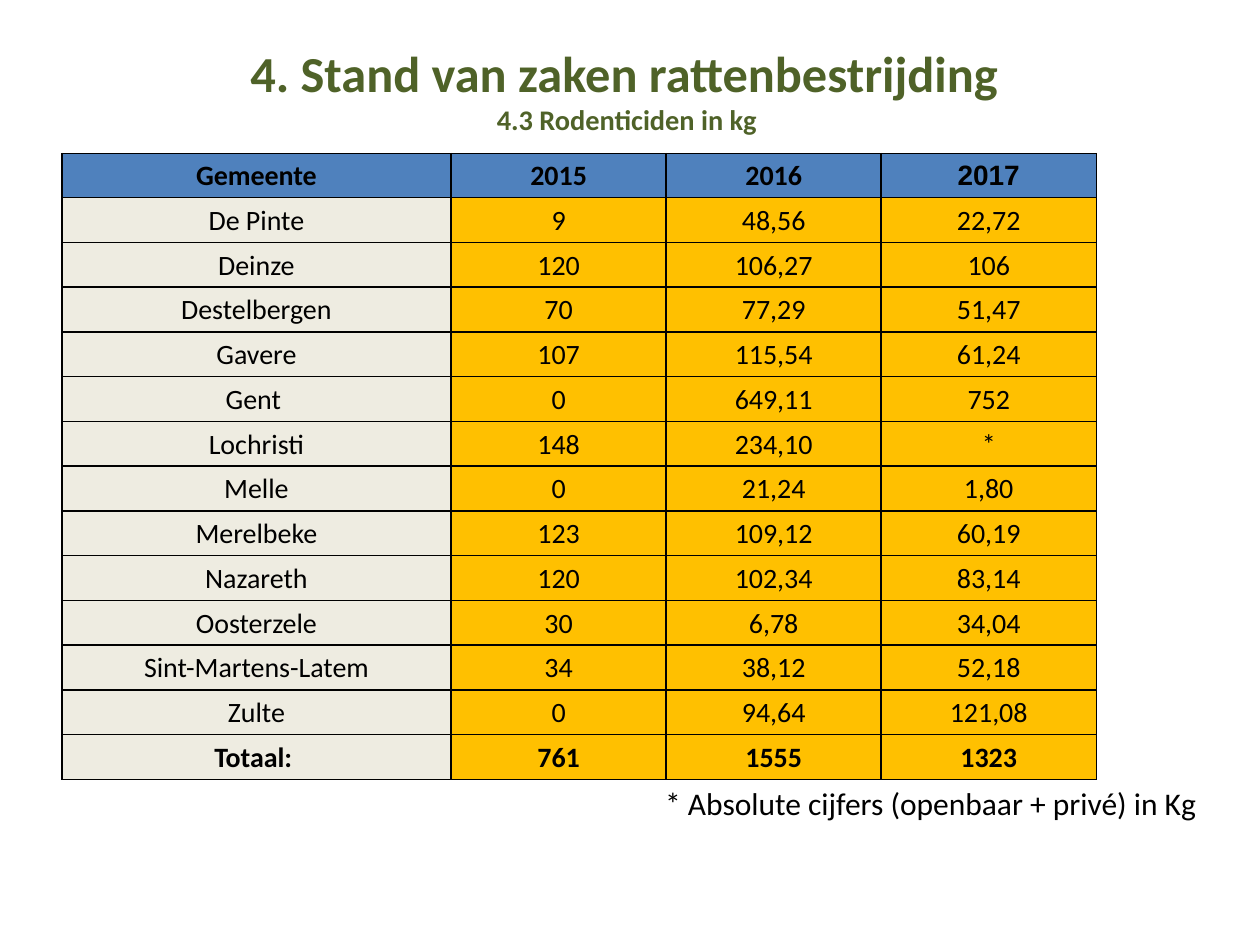
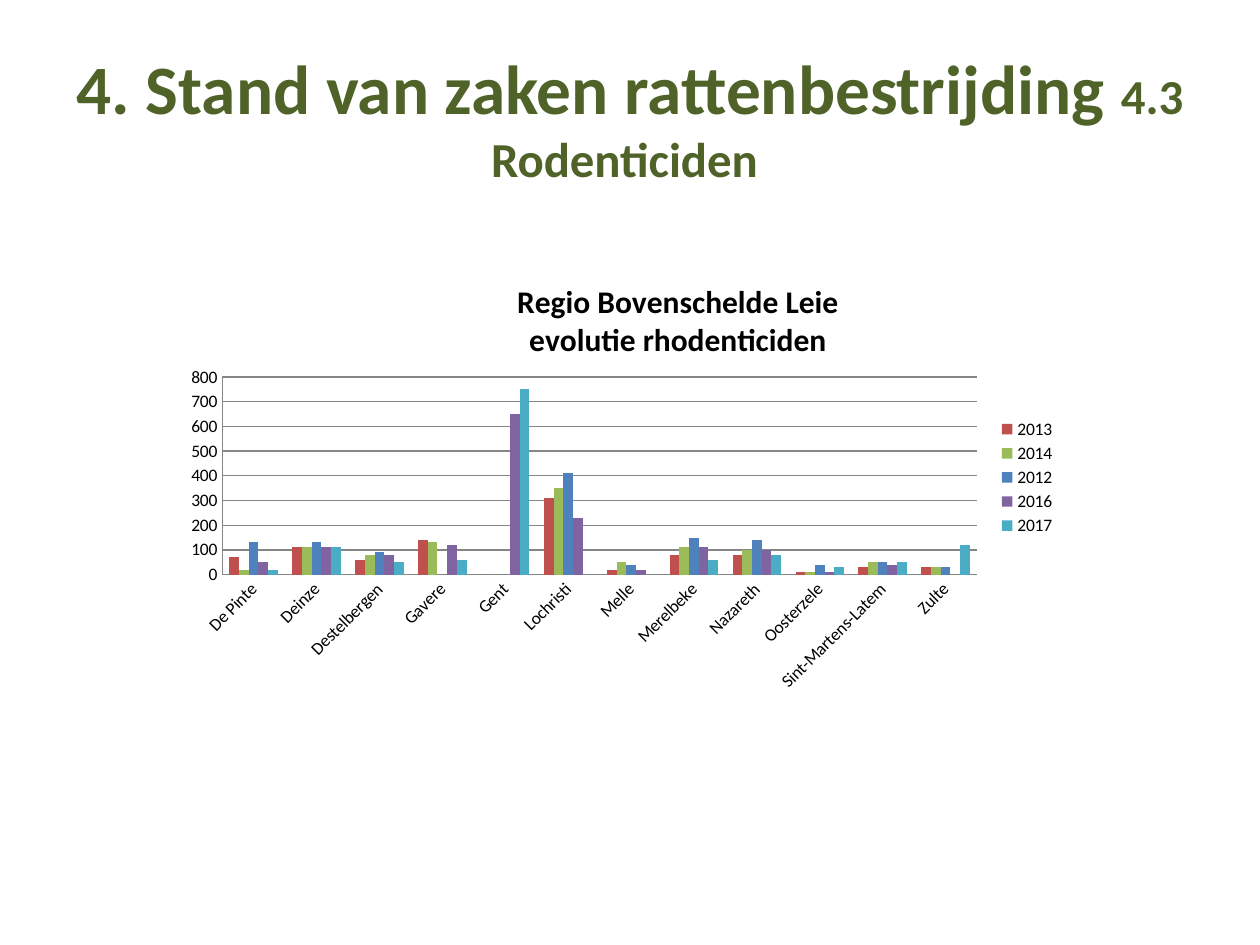
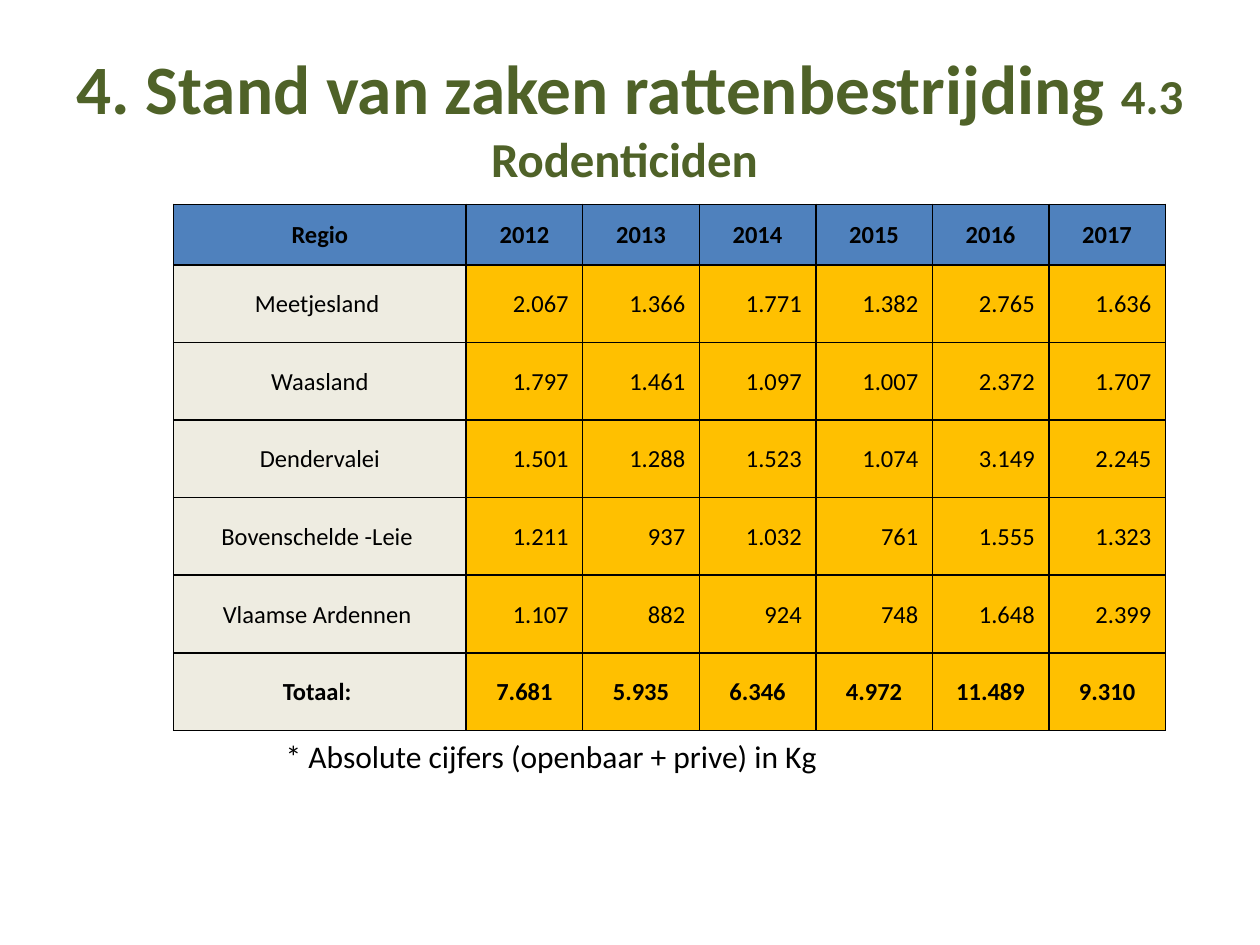
from lxml import etree
from pptx import Presentation
from pptx.chart.data import CategoryChartData
from pptx.dml.color import RGBColor
from pptx.enum.chart import XL_CHART_TYPE, XL_LEGEND_POSITION, XL_TICK_MARK
from pptx.enum.text import MSO_ANCHOR, PP_ALIGN
from pptx.oxml import parse_xml
from pptx.oxml.ns import nsdecls, qn
from pptx.util import Pt

LEFT, CENTER, RIGHT = PP_ALIGN.LEFT, PP_ALIGN.CENTER, PP_ALIGN.RIGHT
TOP, MIDDLE = MSO_ANCHOR.TOP, MSO_ANCHOR.MIDDLE
COLUMNS = XL_CHART_TYPE.COLUMN_CLUSTERED
LEGEND_RIGHT = XL_LEGEND_POSITION.RIGHT
NO_TICK = XL_TICK_MARK.NONE

FONT = "Calibri"
BLACK, GREEN, GRAY = "000000", "4F6228", "868686"
HEADER_FILL, LABEL_FILL, VALUE_FILL = "4F81BD", "EEECE1", "FFC000"
TITLE_BOX = (36, 21.6, 648, 90)
TITLE = "4. Stand van zaken rattenbestrijding "

TOWN_ROWS = [
    ("Gemeente", "2015", "2016", "2017"),
    ("De Pinte", "9", "48,56", "22,72"),
    ("Deinze", "120", "106,27", "106"),
    ("Destelbergen", "70", "77,29", "51,47"),
    ("Gavere", "107", "115,54", "61,24"),
    ("Gent ", "0", "649,11", "752"),
    ("Lochristi", "148", "234,10", "*"),
    ("Melle", "0", "21,24", "1,80"),
    ("Merelbeke", "123", "109,12", "60,19"),
    ("Nazareth", "120", "102,34", "83,14"),
    ("Oosterzele", "30", "6,78", "34,04"),
    ("Sint-Martens-Latem", "34", "38,12", "52,18"),
    ("Zulte", "0", "94,64", "121,08"),
    ("Totaal: ", "761", "1555", "1323"),
]
REGION_ROWS = [
    ("Regio", "2012", "2013", "2014", "2015", "2016", "2017"),
    ("Meetjesland ", "2.067", "1.366", "1.771", "1.382", "2.765", "1.636"),
    ("Waasland", "1.797", "1.461", "1.097", "1.007", "2.372", "1.707"),
    ("Dendervalei", "1.501", "1.288", "1.523", "1.074", "3.149", "2.245"),
    ("Bovenschelde -Leie ", "1.211", "937", "1.032", "761", "1.555", "1.323"),
    ("Vlaamse Ardennen ", "1.107", "882", "924", "748", "1.648", "2.399"),
    ("Totaal: ", "7.681", "5.935", "6.346", "4.972", "11.489", "9.310"),
]
TOWNS = [row[0].strip() for row in TOWN_ROWS[1:-1]]
SERIES = [
    ("2013", "C0504D", (70, 110, 60, 140, 0, 310, 20, 80, 80, 10, 30, 30)),
    ("2014", "9BBB59", (20, 110, 80, 130, 0, 350, 50, 110, 100, 10, 50, 30)),
    ("2012", "4F81BD", (130, 130, 90, 0, 0, 410, 40, 150, 140, 40, 50, 30)),
    ("2016", "8064A2", (50, 110, 80, 120, 650, 230, 20, 110, 100, 10, 40, None)),
    ("2017", "4BACC6", (20, 110, 50, 60, 750, 0, 0, 60, 80, 30, 50, 120)),
]


def rgb(value):
    """Return the colour for a hex string."""
    return RGBColor.from_string(value)


def set_font(font, size, color=BLACK, bold=False, name=FONT):
    """Apply size, colour, weight and typeface to a font."""
    for attribute, value in {"size": Pt(size), "bold": bold, "name": name}.items():
        setattr(font, attribute, value)
    font.color.rgb = rgb(color)


def add_text(slide, box, paragraphs, color=BLACK, bold=False, align=LEFT, anchor=TOP):
    """Add a text box whose paragraphs are lists of (text, size) runs."""
    frame = slide.shapes.add_textbox(*map(Pt, box)).text_frame
    frame.word_wrap = True
    frame.vertical_anchor = anchor
    for index, runs in enumerate(paragraphs):
        paragraph = frame.add_paragraph() if index else frame.paragraphs[0]
        paragraph.alignment = align
        for text, size in runs:
            run = paragraph.add_run()
            run.text = text
            set_font(run.font, size, color, bold)
    return frame


def add_title(slide, paragraphs, anchor=MIDDLE):
    """Add the green slide title."""
    return add_text(slide, TITLE_BOX, paragraphs, GREEN, True, CENTER, anchor)


def add_wide_title(slide):
    """Add the large title that runs on into the section name."""
    add_title(slide, [[(TITLE, 39.6), ("4.3 Rodenticiden ", 27.9)]])


def add_borders(cell):
    """Draw a thin black line on each side of a cell."""
    properties = cell._tc.get_or_add_tcPr()
    for side in ("lnL", "lnR", "lnT", "lnB"):
        line = etree.SubElement(properties, qn(f"a:{side}"), w=str(Pt(1)))
        fill = etree.SubElement(line, qn("a:solidFill"))
        etree.SubElement(fill, qn("a:srgbClr"), val=BLACK)


def fill_cell(cell, text, fill, size, bold, align, right_margin):
    """Write and format one table cell."""
    add_borders(cell)
    cell.fill.solid()
    cell.fill.fore_color.rgb = rgb(fill)
    margins = {"left": 0.72, "right": right_margin, "top": 0.72, "bottom": 0}
    for side, margin in margins.items():
        setattr(cell, f"margin_{side}", Pt(margin))
    cell.vertical_anchor = MIDDLE
    paragraph = cell.text_frame.paragraphs[0]
    paragraph.alignment = align
    run = paragraph.add_run()
    run.text = text
    set_font(run.font, size, bold=bold)


def add_data_table(slide, origin, rows, widths, heights, size, value_align=CENTER):
    """Add a table; widths and heights are (first, others)."""
    column_widths = [widths[0]] + [widths[1]] * (len(rows[0]) - 1)
    row_heights = [heights[0]] + [heights[1]] * (len(rows) - 1)
    box = (*origin, sum(column_widths), sum(row_heights))
    table = slide.shapes.add_table(len(rows), len(rows[0]), *map(Pt, box)).table
    for column, width in zip(table.columns, column_widths):
        column.width = Pt(width)
    for row, height in zip(table.rows, row_heights):
        row.height = Pt(height)
    for row_index, values in enumerate(rows):
        bold = row_index in (0, len(rows) - 1)
        for column_index, text in enumerate(values):
            fill = LABEL_FILL if column_index == 0 else VALUE_FILL
            fill = HEADER_FILL if row_index == 0 else fill
            align = CENTER if bold or column_index == 0 else value_align
            margin = 8 if align == RIGHT else 0.72
            cell = table.cell(row_index, column_index)
            fill_cell(cell, text, fill, size, bold, align, margin)
    return table


def set_layout(element, x, y, width=None, height=None, inner=False):
    """Place a chart part by fractions of the chart box."""
    for old in element.findall(qn("c:layout")):
        element.remove(old)
    values = {"x": x, "y": y, "w": width, "h": height}
    target = '<c:layoutTarget val="inner"/>' if inner else ""
    modes = '<c:xMode val="edge"/><c:yMode val="edge"/>'
    sizes = "".join(f'<c:{key} val="{value}"/>' for key, value in values.items() if value)
    layout = parse_xml(f'<c:layout {nsdecls("c")}><c:manualLayout>{target}{modes}{sizes}'
                       "</c:manualLayout></c:layout>")
    before = [child for child in element
              if child.tag in (qn("c:tx"), qn("c:legendPos"))]
    element.insert(len(before), layout)


def add_evolution_chart(slide, box):
    """Add the clustered columns per town and year."""
    data = CategoryChartData(number_format="0")
    data.categories = TOWNS
    for name, _, values in SERIES:
        data.add_series(name, values)
    chart = slide.shapes.add_chart(COLUMNS, *map(Pt, box), data).chart
    set_font(chart.font, 10)
    plot = chart.plots[0]
    plot.gap_width, plot.overlap, plot.vary_by_categories = 150, 0, False
    for series, (_, color, _) in zip(plot.series, SERIES):
        series.format.fill.solid()
        series.format.fill.fore_color.rgb = rgb(color)
    style_axes(chart)
    title = chart.chart_title
    frame = title.text_frame
    for index, text in enumerate(("Regio Bovenschelde Leie", "evolutie rhodenticiden")):
        paragraph = frame.add_paragraph() if index else frame.paragraphs[0]
        run = paragraph.add_run()
        run.text = text
        set_font(run.font, 18, bold=True)
    chart.has_legend = True
    chart.legend.position = LEGEND_RIGHT
    chart.legend.include_in_layout = False
    set_layout(title._element, 0.38, 0.05)
    set_layout(chart.legend._element, 0.92, 0.36, 0.07, 0.28)
    set_layout(chart._chartSpace.chart.plotArea, 0.054, 0.275, 0.845, 0.443, inner=True)


def style_axes(chart):
    """Format the axes and the gridlines."""
    values, towns = chart.value_axis, chart.category_axis
    for axis in (values, towns):
        axis.major_tick_mark = axis.minor_tick_mark = NO_TICK
        axis.format.line.color.rgb = rgb(GRAY)
        set_font(axis.tick_labels.font, 10)
    towns._element.find(qn("c:txPr")).find(qn("a:bodyPr")).set("rot", "-2700000")
    limits = {"minimum_scale": 0, "maximum_scale": 800, "major_unit": 100}
    for attribute, value in limits.items():
        setattr(values, attribute, value)
    values.tick_labels.number_format = "0"
    values.tick_labels.number_format_is_linked = False
    values.major_gridlines.format.line.color.rgb = rgb(GRAY)


def build_town_slide(slide):
    """Show the use per town."""
    frame = add_title(slide, [[(TITLE, 28.8)], [("4.3 Rodenticiden in kg ", 16.2)]], TOP)
    frame.margin_top = Pt(2.4)
    table = add_data_table(slide, (35.3, 87.8), TOWN_ROWS, (222.5, 122.9),
                           (25.2, 25.58), 16)
    table.cell(0, 3).text_frame.paragraphs[0].runs[0].font.name = "Arial"
    add_text(slide, (373, 444.2, 347, 29),
             [[("* Absolute cijfers (openbaar + privé) in Kg", 18)]])


def build_chart_slide(slide):
    """Show the evolution per town."""
    add_wide_title(slide)
    add_evolution_chart(slide, (99.4, 145.4, 510.5, 254.9))


def build_region_slide(slide):
    """Show the use per region."""
    add_wide_title(slide)
    add_text(slide, (156.2, 417.6, 380, 29),
             [[("* Absolute cijfers (openbaar + prive) in Kg", 18)]])
    add_data_table(slide, (99.2, 116.8), REGION_ROWS, (167.2, 66.6),
                   (34.6, 44.35), 14, RIGHT)


def main():
    """Build and save the presentation."""
    presentation = Presentation()
    presentation.slide_width, presentation.slide_height = Pt(720), Pt(540)
    for build in (build_town_slide, build_chart_slide, build_region_slide):
        build(presentation.slides.add_slide(presentation.slide_layouts[6]))
    presentation.save("out.pptx")


if __name__ == "__main__":
    main()
